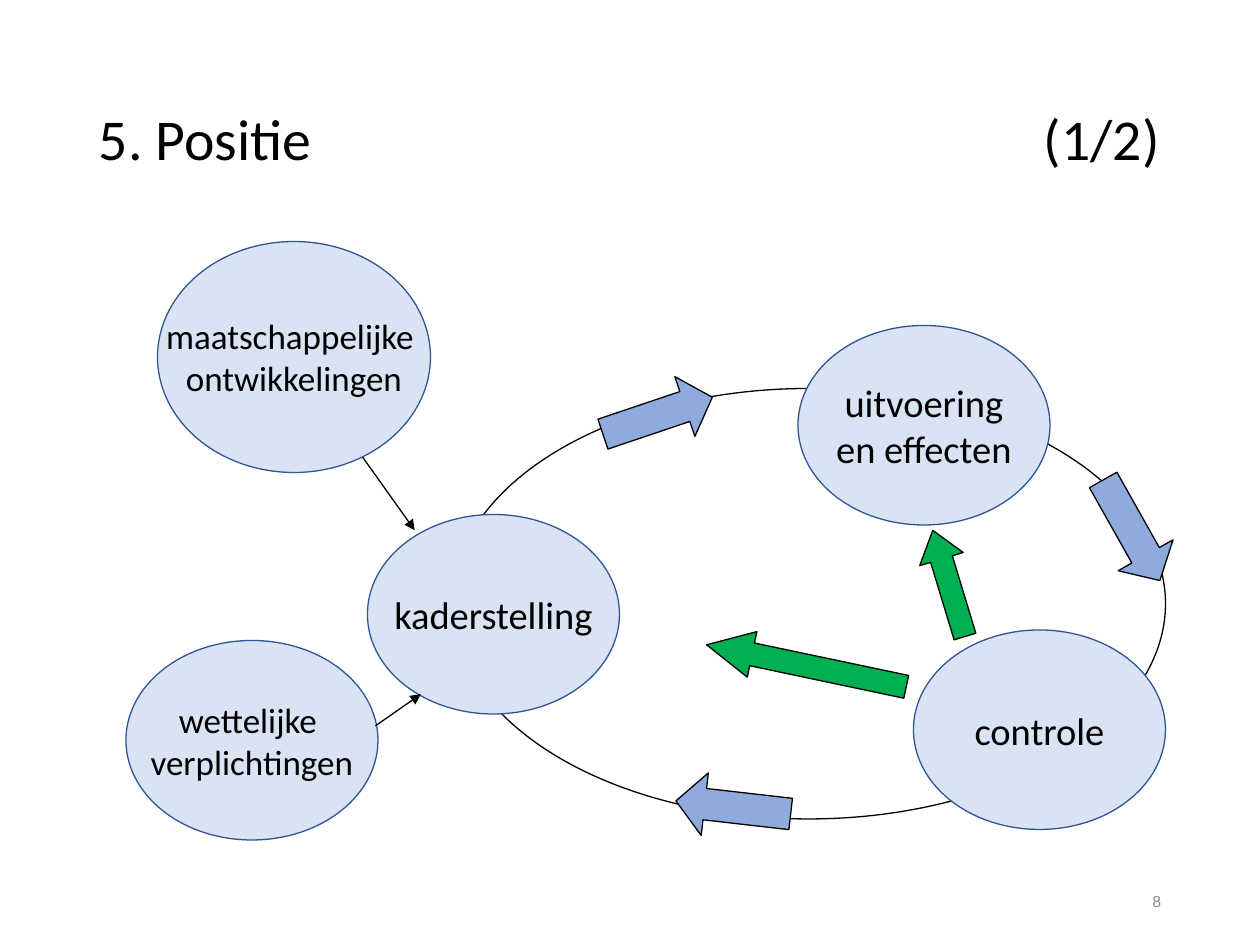
from dataclasses import dataclass
from lxml.etree import SubElement
from pptx import Presentation
from pptx.dml.color import RGBColor as RGB
from pptx.enum.shapes import MSO_CONNECTOR as Link, MSO_SHAPE as Kind
from pptx.enum.text import MSO_ANCHOR as Anchor, PP_ALIGN as Align
from pptx.oxml.ns import qn
from pptx.util import Pt


@dataclass(frozen=True)
class Theme:
    black: str = "000000"
    white: str = "FFFFFF"
    pale: str = "DAE3F3"
    navy: str = "2F5597"
    blue: str = "8FAADC"
    green: str = "00B050"
    grey: str = "898989"
    font: str = "Calibri"
    num_font: str = "Arial"
    title: int = 33
    large: int = 22
    small: int = 20
    num: int = 9
    line: float = 0.75


class Board:
    def __init__(self, slide, theme):
        self.slide, self.theme = slide, theme

    def fill_text(self, frame, text, size, align, color=None, font=None):
        frame.text = text
        frame.vertical_anchor = Anchor.MIDDLE
        for para in frame.paragraphs:
            para.alignment = align
            for run in para.runs:
                run.font.size = Pt(size)
                run.font.name = font or self.theme.font
                run.font.color.rgb = RGB.from_string(color or self.theme.black)

    def label(self, box, text, size, align, color=None, font=None):
        shape = self.slide.shapes.add_textbox(*map(Pt, box))
        shape.text_frame.word_wrap = True
        self.fill_text(shape.text_frame, text, size, align, color, font)
        return shape.text_frame.paragraphs[0]

    def title(self, box, text):
        para = self.label(box, text, self.theme.title, Align.LEFT)
        para.line_spacing = 0.9
        para._p.get_or_add_pPr().set("defTabSz", str(Pt(54)))

    def stroke(self, line, color):
        line.color.rgb = RGB.from_string(color)
        line.width = Pt(self.theme.line)

    def shape(self, kind, box, fill, edge):
        shape = self.slide.shapes.add_shape(kind, *map(Pt, box))
        shape.shadow.inherit = False
        shape.fill.solid()
        shape.fill.fore_color.rgb = RGB.from_string(fill)
        self.stroke(shape.line, edge)
        return shape

    def ring(self, box):
        self.shape(Kind.OVAL, box, self.theme.white, self.theme.black)

    def bubble(self, left, top, text, size, wide=144, high=114):
        box = (left, top, wide, high)
        shape = self.shape(Kind.OVAL, box, self.theme.pale, self.theme.navy)
        shape.text_frame.word_wrap = False
        self.fill_text(shape.text_frame, text, size, Align.CENTER)

    def arrow(self, kind, box, turn, head, fill):
        shape = self.shape(kind, box, fill, self.theme.black)
        shape.rotation = turn
        shape.adjustments[0] = 0.5
        shape.adjustments[1] = head

    def link(self, *ends):
        line = self.slide.shapes.add_connector(Link.STRAIGHT, *map(Pt, ends))
        self.stroke(line.line, self.theme.black)
        props = line._element.spPr
        SubElement(props.find(qn("a:ln")), qn("a:tailEnd"), type="triangle")
        SubElement(props, qn("a:effectLst"))


def main():
    deck = Presentation()
    deck.slide_width, deck.slide_height = Pt(720), Pt(540)
    theme = Theme()
    board = Board(deck.slides.add_slide(deck.slide_layouts[6]), theme)

    board.title((49.5, 28.75, 621, 104.4), "5. Positie" + "\t" * 8 + "(1/2)")
    board.ring((258, 222, 408, 246))

    board.bubble(210, 294, "kaderstelling", theme.large)
    board.bubble(90, 138, "maatschappelijke \nontwikkelingen", theme.small, 156, 132)
    board.bubble(522, 360, "controle", theme.large)
    board.bubble(456, 186, "uitvoering\nen effecten", theme.large)
    board.bubble(72, 366, "wettelijke \nverplichtingen", theme.small)

    board.link(207.2, 261.2, 237, 303)
    board.link(214.5, 414.8, 240.5, 396.7)

    for left, top, turn in ((628.6, 270, 330.6), (357.8, 204.5, 251.4), (401, 428.4, 96.5)):
        board.arrow(Kind.DOWN_ARROW, (left, top, 36, 66), turn, 0.46, theme.blue)
    board.arrow(Kind.LEFT_ARROW, (402.5, 367.2, 116.6, 26.6), 11.9, 1, theme.green)
    board.arrow(Kind.LEFT_ARROW, (510.5, 320.4, 63.4, 26), 73.1, 0.66, theme.green)

    board.label((508.5, 500.5, 162, 28.75), "8", theme.num, Align.RIGHT,
                theme.grey, theme.num_font)
    deck.save("out.pptx")


if __name__ == "__main__":
    main()
